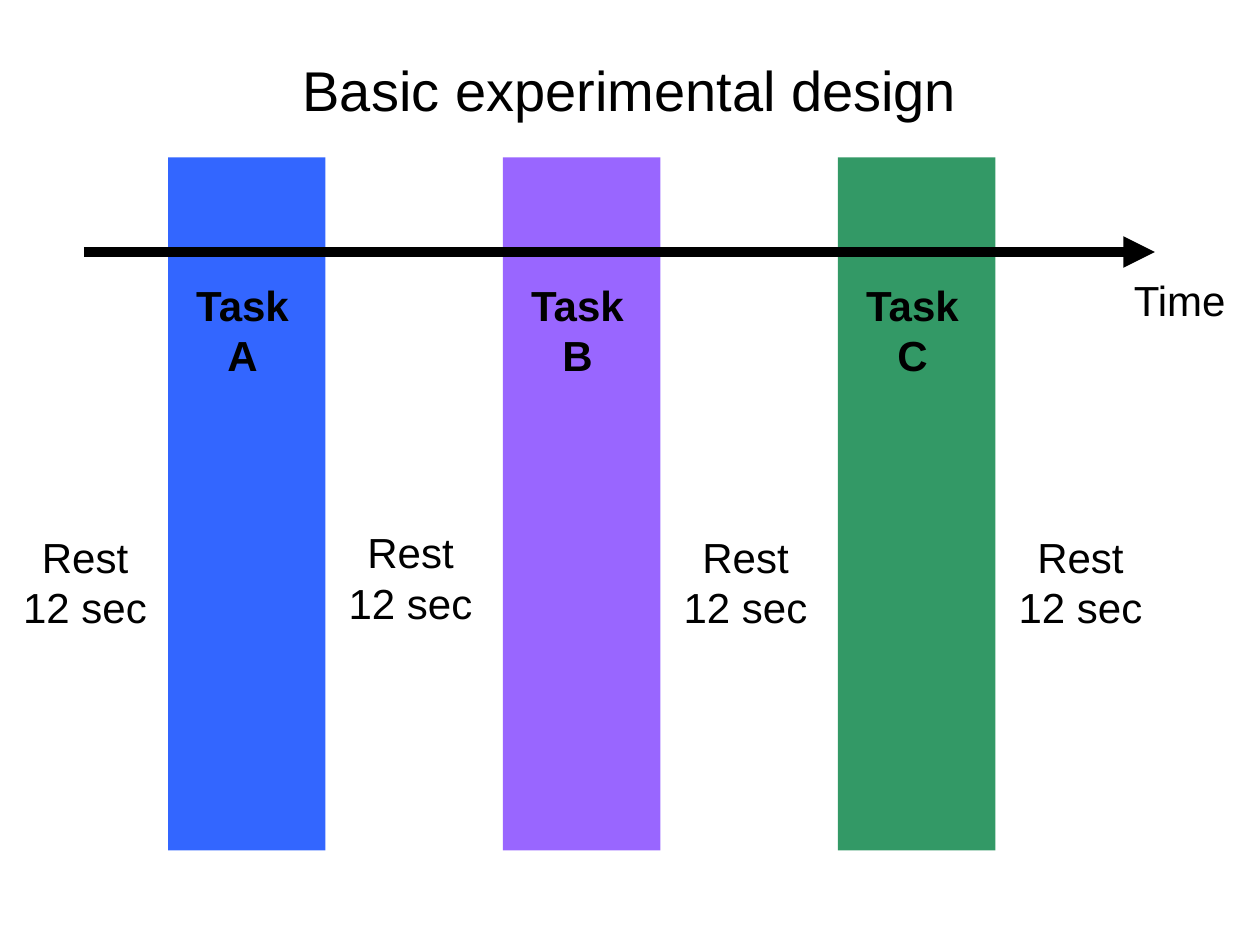
from lxml import etree
from pptx import Presentation
from pptx.dml.color import RGBColor
from pptx.enum.shapes import MSO_CONNECTOR, MSO_SHAPE
from pptx.enum.text import MSO_ANCHOR, MSO_AUTO_SIZE, PP_ALIGN
from pptx.oxml.ns import qn
from pptx.util import Inches, Pt

LINE, RECT = MSO_CONNECTOR.STRAIGHT, MSO_SHAPE.RECTANGLE
TOP, MID = MSO_ANCHOR.TOP, MSO_ANCHOR.MIDDLE
GROW, FIXED = MSO_AUTO_SIZE.SHAPE_TO_FIT_TEXT, MSO_AUTO_SIZE.NONE
LEFT, MIDDLE = PP_ALIGN.LEFT, PP_ALIGN.CENTER
WIDE, HIGH = Inches(10), Inches(7.5)
COLS, ROWS = 120, 90
STEP = 31.9
HEX = {"ink": "000000", "A": "3366FF", "B": "9966FF", "C": "339966"}


def grid(x, y):
    """Turn columns and rows into slide lengths."""
    return round(x * WIDE / COLS), round(y * HIGH / ROWS)


def paint(name):
    """Look up a colour by name."""
    return RGBColor.from_string(HEX[name])


def bar(slide, name, x):
    """Draw the tall block of one task."""
    shape = slide.shapes.add_shape(RECT, *grid(x, 15), *grid(15, 66))
    shape.shadow.inherit = False
    shape.fill.solid()
    shape.fill.fore_color.rgb = paint(name)
    shape.line.fill.background()


def label(slide, text, x, y, w, h, size=24, bold=False, wrap=False,
          align=MIDDLE, anchor=TOP, fit=GROW):
    """Write a text box with one paragraph a line."""
    frame = slide.shapes.add_textbox(*grid(x, y), *grid(w, h)).text_frame
    frame.text = text
    frame.word_wrap = wrap
    frame.auto_size = fit
    frame.vertical_anchor = anchor
    for para in frame.paragraphs:
        para.alignment = align
        for run in para.runs:
            run.font.name = "Arial"
            run.font.size = Pt(size)
            run.font.bold = bold
            run.font.color.rgb = paint("ink")


def arrow(slide, x, end, y):
    """Draw the time axis with its arrowhead."""
    line = slide.shapes.add_connector(LINE, *grid(x, y), *grid(end, y))
    line.line.color.rgb = paint("ink")
    line.line.width = Pt(6)
    props = line.element.spPr
    etree.SubElement(props.find(qn("a:ln")), qn("a:tailEnd"), type="triangle")
    etree.SubElement(props, qn("a:effectLst"))


def main():
    """Build the slide and save it."""
    deck = Presentation()
    deck.slide_width, deck.slide_height = WIDE, HIGH
    slide = deck.slides.add_slide(deck.slide_layouts[6])
    label(slide, "Basic experimental design", 9, 1, 102, 15, size=32,
          wrap=True, anchor=MID, fit=FIXED)
    for i, name in enumerate("ABC"):
        bar(slide, name, 16 + i * STEP)
        label(slide, f"Task\n{name}", 15 + i * STEP, 26, 16.2, 10.8,
              bold=True, wrap=True)
    label(slide, "Time", 106.8, 25.6, 11.3, 6, align=LEFT)
    arrow(slide, 8, 110, 24)
    for x, y in ((1, 50), (32, 49.6), (32 + STEP, 50), (32 + 2 * STEP, 50)):
        label(slide, "Rest\n12 sec", x, y, 14.2, 10.8)
    deck.save("out.pptx")


if __name__ == "__main__":
    main()
